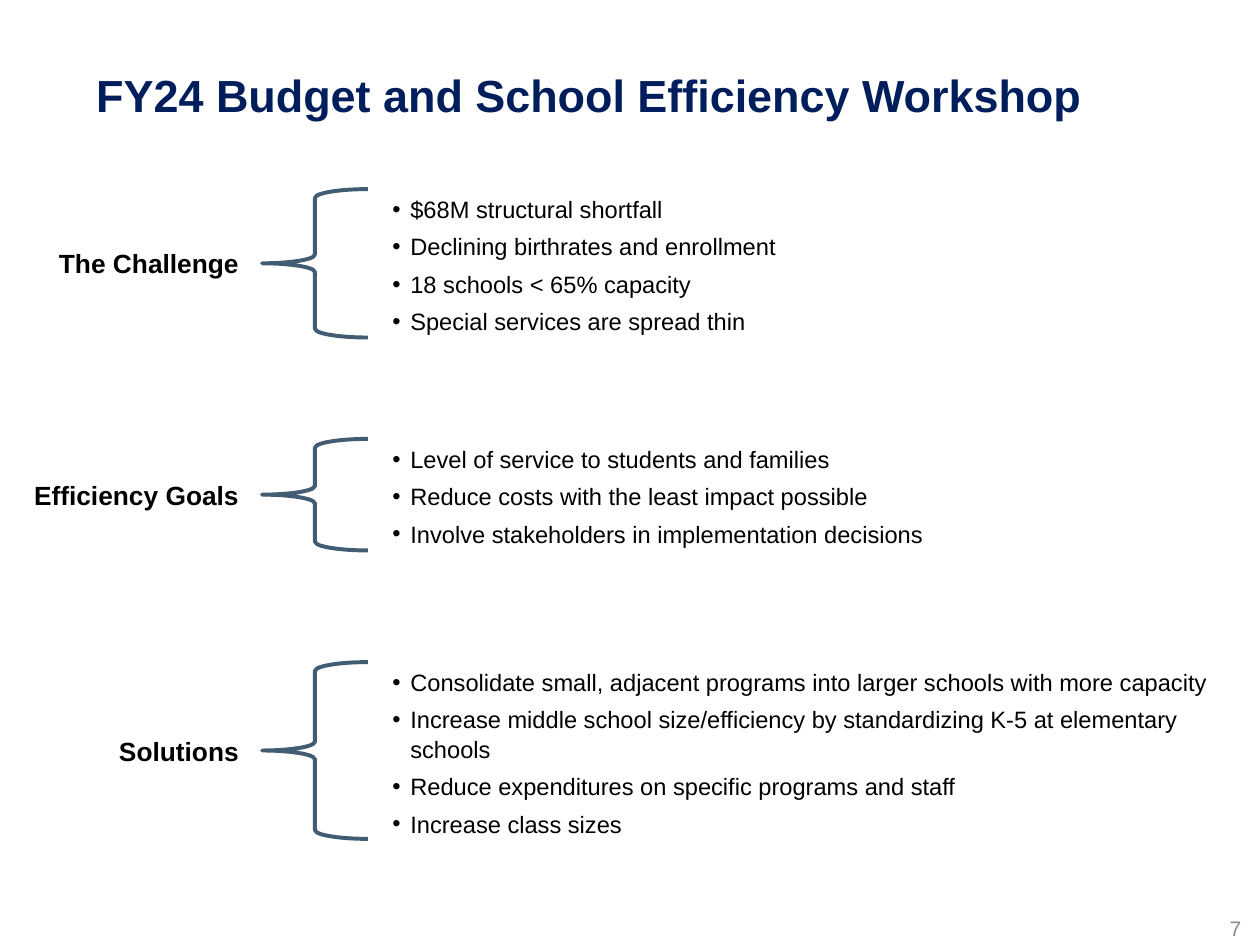
import pptx
import pptx.util
import pptx.dml.color
import pptx.enum.shapes
import pptx.enum.text
import pptx.oxml

ALIGN = pptx.enum.text.PP_ALIGN
ANCHOR = pptx.enum.text.MSO_ANCHOR
SLIDE_WIDTH = pptx.util.Inches(13.32)
SLIDE_HEIGHT = pptx.util.Inches(9.99)
COLUMN = SLIDE_WIDTH / 100
ROW = SLIDE_HEIGHT / 100

THEME = {
    "title": {"size": 34.2, "color": "001E5C", "bold": True},
    "label": {"size": 20, "color": "000000", "bold": True},
    "bullet": {"size": 18, "color": "000000", "bold": False},
    "number": {"size": 16, "color": "8C8C8C", "bold": False},
    "font": "Arial",
    "brace": "425C73",
    "brace_width": 3,
}

SECTION_LEFT = 1.5
SECTION_WIDTH = 97.05
LABEL_WIDTH = 18.2
BRACE_OFFSET, BRACE_WIDTH = 19.3, 8.4
BULLETS_OFFSET = 28.9
BULLET_INDENT = pptx.util.Inches(0.19)

SECTIONS = [
    ("The Challenge", 20.02, 15.7, [
        "$68M structural shortfall",
        "Declining birthrates and enrollment",
        "18 schools < 65% capacity",
        "Special services are spread thin",
    ]),
    ("Efficiency Goals", 46.45, 11.8, [
        "Level of service to students and families",
        "Reduce costs with the least impact possible",
        "Involve stakeholders in implementation decisions",
    ]),
    ("Solutions", 70.07, 18.7, [
        "Consolidate small, adjacent programs into larger schools with more capacity",
        "Increase middle school size/efficiency by standardizing K-5 at elementary schools",
        "Reduce expenditures on specific programs and staff",
        "Increase class sizes",
    ]),
]


def set_attributes(target, values):
    for name, value in values.items():
        setattr(target, name, value)


def to_lengths(box):
    return [round(share * unit) for share, unit in zip(box, (COLUMN, ROW, COLUMN, ROW))]


def add_text(slide, box, lines, style, align=ALIGN.LEFT, anchor=ANCHOR.MIDDLE, bulleted=False):
    frame = slide.shapes.add_textbox(*to_lengths(box)).text_frame
    set_attributes(frame, {"word_wrap": True, "vertical_anchor": anchor})
    for index, line in enumerate(lines):
        paragraph = frame.add_paragraph() if index else frame.paragraphs[0]
        paragraph.text = line
        paragraph.alignment = align
        if bulleted:
            add_bullet(paragraph, index)
        format_font(paragraph.font, THEME[style])
    return frame


def add_bullet(paragraph, index):
    paragraph.line_spacing = 1.04
    paragraph.space_before = pptx.util.Pt(6 if index else 0)
    properties = paragraph._p.get_or_add_pPr()
    properties.set("marL", str(BULLET_INDENT))
    properties.set("indent", str(-BULLET_INDENT))
    namespace = pptx.oxml.ns.nsdecls("a")
    for element in (f'<a:buFont {namespace} typeface="Arial"/>', f'<a:buChar {namespace} char="•"/>'):
        properties.append(pptx.oxml.parse_xml(element))


def format_font(font, style):
    set_attributes(font, {
        "name": THEME["font"],
        "size": pptx.util.Pt(style["size"]),
        "bold": style["bold"],
    })
    font.color.rgb = pptx.dml.color.RGBColor.from_string(style["color"])


def add_brace(slide, box):
    brace = slide.shapes.add_shape(pptx.enum.shapes.MSO_SHAPE.LEFT_BRACE, *to_lengths(box))
    brace.shadow.inherit = False
    brace.fill.background()
    brace.line.color.rgb = pptx.dml.color.RGBColor.from_string(THEME["brace"])
    brace.line.width = pptx.util.Pt(THEME["brace_width"])


def add_section(slide, box, label, bullets):
    left, top, width, height = box
    add_text(slide, (left, top, LABEL_WIDTH, height), [label], "label", ALIGN.RIGHT)
    add_brace(slide, (left + BRACE_OFFSET, top, BRACE_WIDTH, height))
    bullets_box = (left + BULLETS_OFFSET, top, width - BULLETS_OFFSET, height)
    add_text(slide, bullets_box, bullets, "bullet", anchor=ANCHOR.TOP, bulleted=True)


def add_page_number(slide, box, number):
    frame = add_text(slide, box, [number], "number", ALIGN.RIGHT)
    set_attributes(frame, {
        "margin_left": pptx.util.Inches(0.13),
        "margin_right": pptx.util.Inches(0.13),
        "margin_top": pptx.util.Inches(0.07),
        "margin_bottom": pptx.util.Inches(0.07),
    })


def main():
    presentation = pptx.Presentation()
    set_attributes(presentation, {"slide_width": SLIDE_WIDTH, "slide_height": SLIDE_HEIGHT})
    slide = presentation.slides.add_slide(presentation.slide_layouts[6])
    add_text(slide, (6.9, 5.3, 90.5, 9.4), ["FY24 Budget and School Efficiency Workshop"], "title")
    for label, top, height, bullets in SECTIONS:
        add_section(slide, (SECTION_LEFT, top, SECTION_WIDTH, height), label, bullets)
    add_page_number(slide, (77, 95.6, 22.5, 5.3), "7")
    presentation.save("out.pptx")


if __name__ == "__main__":
    main()
